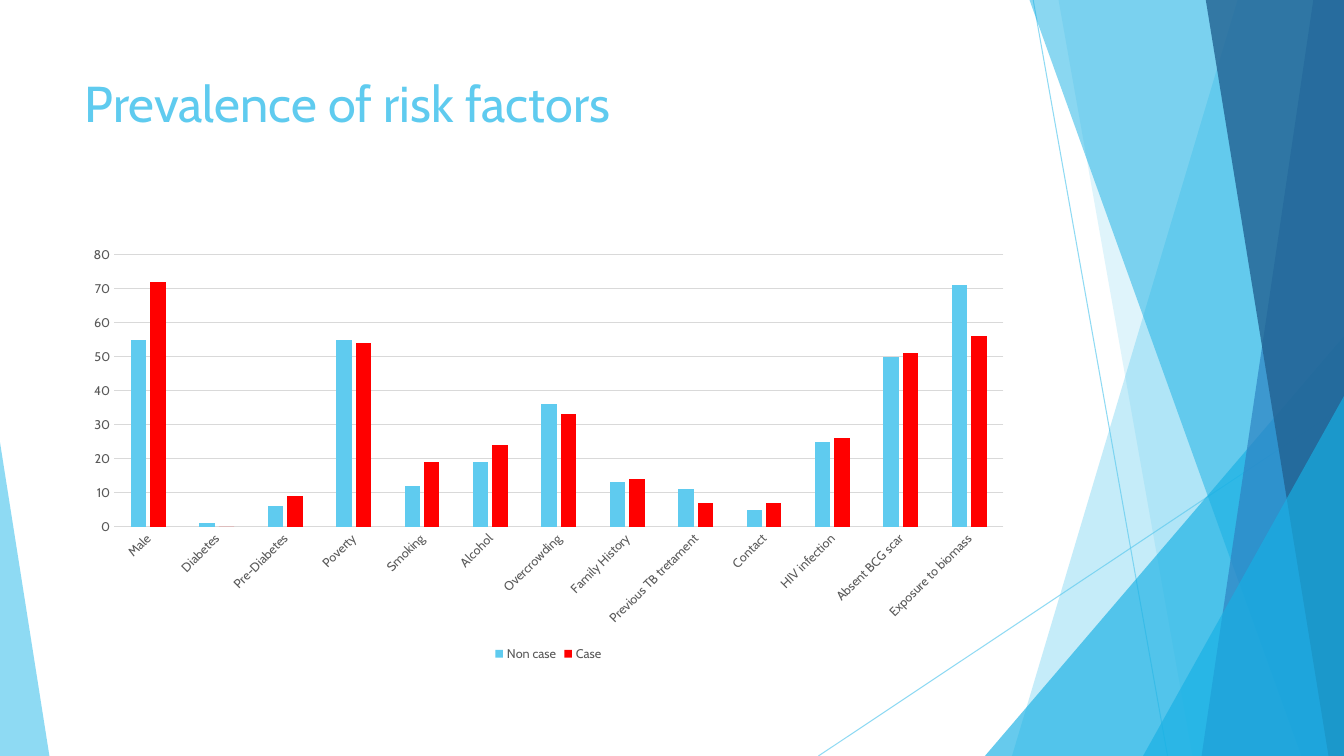
from dataclasses import dataclass

from lxml.etree import SubElement
from pptx import Presentation
from pptx.chart.data import CategoryChartData
from pptx.dml.color import RGBColor
from pptx.enum.chart import XL_CHART_TYPE, XL_LEGEND_POSITION, XL_TICK_MARK
from pptx.enum.shapes import MSO_CONNECTOR, MSO_SHAPE
from pptx.enum.text import MSO_ANCHOR, PP_ALIGN
from pptx.oxml.ns import qn
from pptx.util import Pt


@dataclass(frozen=True)
class Theme:
    font: str = "Cabin"
    sky: str = "5FCBEF"
    cyan: str = "17B0E4"
    blue: str = "2E83C3"
    navy: str = "226292"
    red: str = "FF0000"
    label: str = "595959"
    grid: str = "D9D9D9"
    title_size: float = 36
    chart_size: float = 9
    thin: float = 0.75


THEME = Theme()
WIDTH, HEIGHT = 960, 540
PANEL_TOP = -0.6

RISK_FACTORS = [
    ("Male", 55, 72),
    ("Diabetes", 1, 0),
    ("Pre-Diabetes", 6, 9),
    ("Poverty", 55, 54),
    ("Smoking", 12, 19),
    ("Alcohol", 19, 24),
    ("Overcrowding", 36, 33),
    ("Family History", 13, 14),
    ("Previous TB tretament", 11, 7),
    ("Contact", 5, 7),
    ("HIV infection", 25, 26),
    ("Absent BCG scar", 50, 51),
    ("Exposure to biomass", 71, 56),
]


def color_of(code):
    return RGBColor.from_string(code)


def set_opacity(shape, percent):
    """Make the solid fill or line of a shape partly transparent."""
    color = next(shape.element.spPr.iter(qn("a:srgbClr")))
    SubElement(color, qn("a:alpha")).set("val", str(percent * 1000))


def paint(shape, color, opacity):
    shape.shadow.inherit = False
    shape.fill.solid()
    shape.fill.fore_color.rgb = color_of(color)
    shape.line.fill.background()
    set_opacity(shape, opacity)


def add_panel(slide, top_left, bottom_left, color, opacity):
    """Add a slanted panel that reaches the right edge of the slide."""
    builder = slide.shapes.build_freeform(Pt(top_left), Pt(PANEL_TOP))
    corners = [(WIDTH, PANEL_TOP), (WIDTH, HEIGHT), (bottom_left, HEIGHT)]
    builder.add_line_segments([(Pt(x), Pt(y)) for x, y in corners], close=True)
    paint(builder.convert_to_shape(), color, opacity)


def add_corner(slide, left, top, width, apex, color, opacity):
    """Add a triangle that stands on the bottom edge of the slide."""
    triangle = slide.shapes.add_shape(
        MSO_SHAPE.ISOSCELES_TRIANGLE, Pt(left), Pt(top), Pt(width), Pt(HEIGHT - top))
    triangle.adjustments[0] = apex
    paint(triangle, color, opacity)


def add_thin_line(slide, start, end):
    line = slide.shapes.add_connector(
        MSO_CONNECTOR.STRAIGHT, *(Pt(value) for value in (*start, *end)))
    line.line.width = Pt(THEME.thin)
    line.line.color.rgb = color_of(THEME.sky)
    set_opacity(line, 70)
    SubElement(line.element.spPr, qn("a:effectLst"))


def add_decoration(slide):
    add_thin_line(slide, (738, 0), (834, HEIGHT))
    add_thin_line(slide, (WIDTH, 290), (584.6, HEIGHT))
    add_panel(slide, 884.2, 722.9, THEME.sky, 36)
    add_panel(slide, 756, 851.8, THEME.sky, 20)
    add_corner(slide, 703.5, 240, 256.5, 1, THEME.cyan, 66)
    add_panel(slide, 735.2, 929.5, THEME.cyan, 50)
    add_panel(slide, 938.2, 858.3, THEME.blue, 70)
    add_panel(slide, 861.2, 949, THEME.navy, 80)
    add_corner(slide, 816.5, 283, 143.5, 1, THEME.cyan, 66)
    add_corner(slide, 0, 316, 35.3, 0, THEME.sky, 70)


def set_title(slide, text):
    title = slide.shapes.title
    title.left, title.top, title.width, title.height = Pt(53.3), Pt(48), Pt(677), Pt(104)
    frame = title.text_frame
    frame.word_wrap = True
    frame.vertical_anchor = MSO_ANCHOR.TOP
    paragraph = frame.paragraphs[0]
    paragraph.alignment = PP_ALIGN.LEFT
    run = paragraph.add_run()
    run.text = text
    run.font.name = THEME.font
    run.font.size = Pt(THEME.title_size)
    run.font.color.rgb = color_of(THEME.sky)
    # Bring the title in front of the decoration
    title.element.getparent().append(title.element)


def style_font(font):
    font.name = THEME.font
    font.size = Pt(THEME.chart_size)
    font.bold = False
    font.color.rgb = color_of(THEME.label)


def style_axis(axis):
    axis.major_tick_mark = axis.minor_tick_mark = XL_TICK_MARK.NONE
    style_font(axis.tick_labels.font)


def style_line(line):
    line.color.rgb = color_of(THEME.grid)
    line.width = Pt(THEME.thin)


def slant_category_labels(chart):
    category_axis = next(chart.element.iter(qn("c:catAx")))
    label_body = next(category_axis.iter(qn("a:bodyPr")))
    label_body.set("rot", str(-45 * 60000))
    label_body.set("vert", "horz")


def add_risk_chart(slide):
    names, non_cases, cases = zip(*RISK_FACTORS)
    data = CategoryChartData()
    data.categories = names
    data.add_series("Non case", non_cases)
    data.add_series("Case", cases)
    chart = slide.shapes.add_chart(
        XL_CHART_TYPE.COLUMN_CLUSTERED, Pt(53.3), Pt(170), Pt(677), Pt(305.5), data).chart
    chart.has_title = False
    style_font(chart.font)

    # Columns
    plot = chart.plots[0]
    plot.gap_width, plot.overlap = 219, -27
    plot.vary_by_categories = False
    for series, color in zip(plot.series, (THEME.sky, THEME.red)):
        series.format.fill.solid()
        series.format.fill.fore_color.rgb = color_of(color)

    # Axes
    style_axis(chart.category_axis)
    style_line(chart.category_axis.format.line)
    slant_category_labels(chart)
    value_axis = chart.value_axis
    style_axis(value_axis)
    value_axis.minimum_scale, value_axis.maximum_scale, value_axis.major_unit = 0, 80, 10
    value_axis.format.line.fill.background()
    value_axis.has_major_gridlines = True
    style_line(value_axis.major_gridlines.format.line)

    # Legend
    chart.has_legend = True
    chart.legend.position = XL_LEGEND_POSITION.BOTTOM
    chart.legend.include_in_layout = False
    style_font(chart.legend.font)


def main():
    presentation = Presentation()
    presentation.slide_width, presentation.slide_height = Pt(WIDTH), Pt(HEIGHT)
    slide = presentation.slides.add_slide(presentation.slide_layouts[5])
    add_decoration(slide)
    set_title(slide, "Prevalence of risk factors")
    add_risk_chart(slide)
    presentation.save("out.pptx")


if __name__ == "__main__":
    main()
